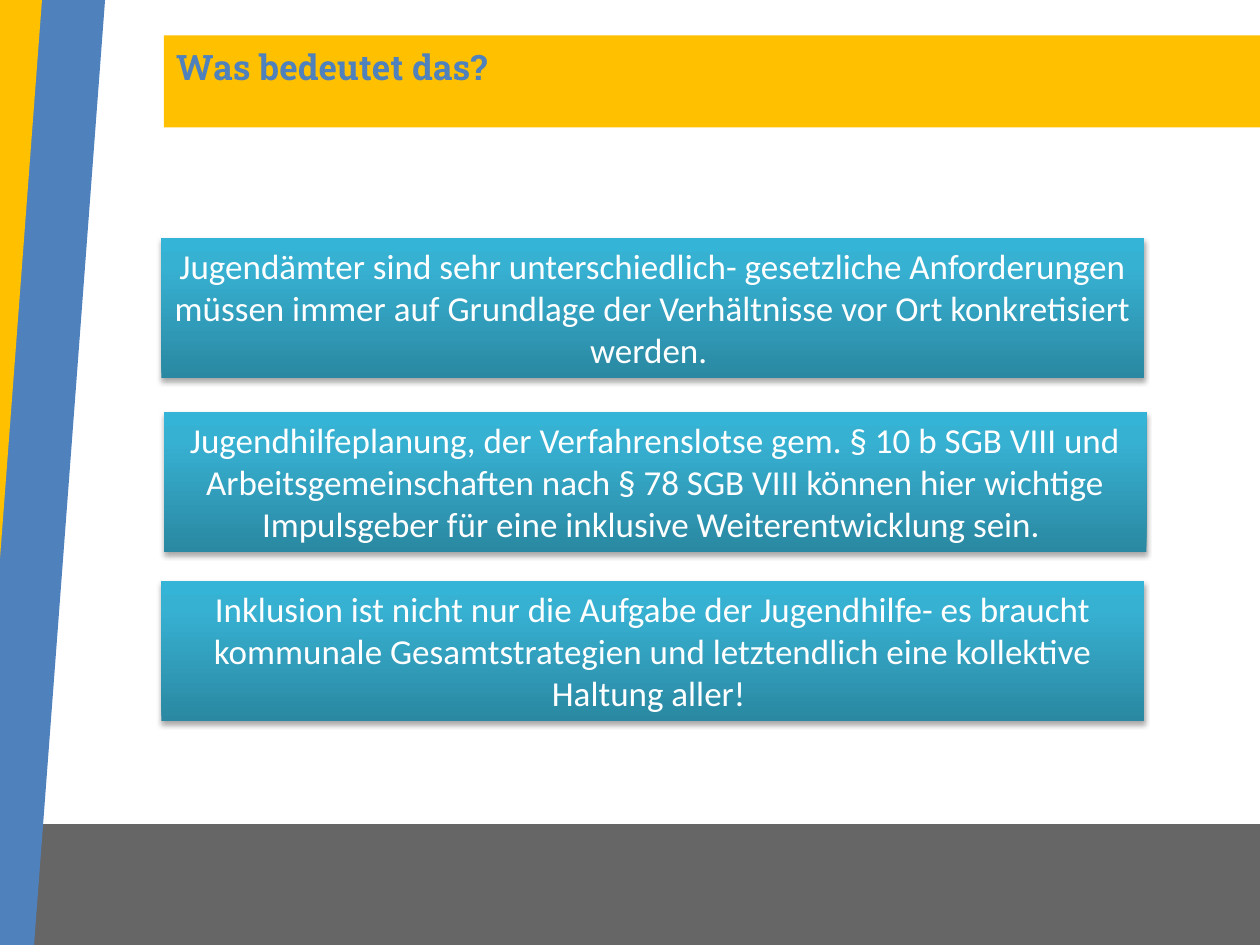
import copy
from dataclasses import dataclass

import lxml.etree
import pptx
import pptx.dml.color
import pptx.enum.shapes
import pptx.enum.text
import pptx.oxml
import pptx.oxml.ns
import pptx.util

Pt = pptx.util.Pt
qn = pptx.oxml.ns.qn

COLORS = {
    "blue": "4F81BD",
    "yellow": "FFC000",
    "black": "000000",
    "white": "FFFFFF",
    "teal_dark": "2A88A2",
    "teal": "37B1D2",
    "teal_light": "34B4D6",
}
STATEMENT_STOPS = [(0, "teal_dark"), (0.8, "teal"), (1, "teal_light")]
STATEMENT_WIDTH, STATEMENT_HEIGHT = 561.6, 79.9


@dataclass
class Band:
    left: float
    top: float
    width: float
    height: float
    color: str
    rotation: float = 0
    opacity: int = 100


@dataclass
class Statement:
    left: float
    top: float
    text: str


BANDS = [
    Band(-8.64, 470.9, 805, 71.3, "black", opacity=60),
    Band(2.9, -16.6, 36.7, 576, "blue", rotation=4.3),
    Band(-26.6, -22.3, 36.7, 413.3, "yellow", rotation=4.3),
    Band(93.6, 20.2, 652.3, 52.6, "yellow"),
]
STATEMENTS = [
    Statement(92.2, 136.1, "Jugendämter sind sehr unterschiedlich- gesetzliche Anforderungen "
              "müssen immer auf Grundlage der Verhältnisse vor Ort konkretisiert werden. "),
    Statement(93.6, 235.4, "Jugendhilfeplanung, der Verfahrenslotse gem. § 10 b SGB VIII und "
              "Arbeitsgemeinschaften nach § 78 SGB VIII können hier wichtige "
              "Impulsgeber für eine inklusive Weiterentwicklung sein. "),
    Statement(92.2, 331.9, "Inklusion ist nicht nur die Aufgabe der Jugendhilfe- es braucht "
              "kommunale Gesamtstrategien und letztendlich eine kollektive Haltung aller! "),
]


def rgb(name: str) -> pptx.dml.color.RGBColor:
    return pptx.dml.color.RGBColor.from_string(COLORS[name])


def add_rectangle(slide, left: float, top: float, width: float, height: float):
    rectangle = slide.shapes.add_shape(
        pptx.enum.shapes.MSO_SHAPE.RECTANGLE, Pt(left), Pt(top), Pt(width), Pt(height))
    rectangle.shadow.inherit = False
    rectangle.line.fill.background()
    return rectangle


def add_band(slide, band: Band) -> None:
    rectangle = add_rectangle(slide, band.left, band.top, band.width, band.height)
    rectangle.rotation = band.rotation
    rectangle.fill.solid()
    rectangle.fill.fore_color.rgb = rgb(band.color)
    if band.opacity < 100:
        color = rectangle._element.spPr.find(qn("a:solidFill")).find(qn("a:srgbClr"))
        alpha = lxml.etree.SubElement(color, qn("a:alpha"))
        alpha.set("val", str(band.opacity * 1000))


def fill_with_gradient(shape) -> None:
    """Fill upwards from dark to light teal with three stops."""
    shape.fill.gradient()
    shape.fill.gradient_angle = 90
    stop_list = shape._element.spPr.find(qn("a:gradFill")).find(qn("a:gsLst"))
    stop_list.append(copy.deepcopy(stop_list[-1]))
    for stop, (position, color) in zip(shape.fill.gradient_stops, STATEMENT_STOPS):
        stop.position = position
        stop.color.rgb = rgb(color)


def add_soft_shadow(shape) -> None:
    shadow = pptx.oxml.parse_xml(
        f'<a:outerShdw {pptx.oxml.ns.nsdecls("a")} blurRad="{Pt(3.1)}" dist="{Pt(1.8)}" '
        f'dir="5400000" rotWithShape="0"><a:srgbClr val="{COLORS["black"]}">'
        '<a:alpha val="35000"/></a:srgbClr></a:outerShdw>')
    shape._element.spPr.find(qn("a:effectLst")).append(shadow)


def write_text(shape, text: str, font_name: str, color: str, bold: bool = False) -> None:
    frame = shape.text_frame
    frame.text = text
    frame.word_wrap = True
    frame.auto_size = pptx.enum.text.MSO_AUTO_SIZE.SHAPE_TO_FIT_TEXT
    font = frame.paragraphs[0].runs[0].font
    font.name = font_name
    font.size = Pt(20)
    font.bold = bold
    font.color.rgb = rgb(color)


def add_statement(slide, statement: Statement) -> None:
    box = add_rectangle(
        slide, statement.left, statement.top, STATEMENT_WIDTH, STATEMENT_HEIGHT)
    fill_with_gradient(box)
    add_soft_shadow(box)
    write_text(box, statement.text, "Calibri", "white")
    box.text_frame.vertical_anchor = pptx.enum.text.MSO_ANCHOR.TOP
    box.text_frame.paragraphs[0].alignment = pptx.enum.text.PP_ALIGN.CENTER


def main() -> None:
    presentation = pptx.Presentation()
    presentation.slide_width, presentation.slide_height = Pt(720), Pt(540)
    slide = presentation.slides.add_slide(presentation.slide_layouts[6])
    for band in BANDS:
        add_band(slide, band)
    title = slide.shapes.add_textbox(Pt(93.6), Pt(22.3), Pt(626.4), Pt(31.7))
    write_text(title, "Was bedeutet das?", "Roboto Slab", "blue", bold=True)
    for statement in STATEMENTS:
        add_statement(slide, statement)
    presentation.save("out.pptx")


if __name__ == "__main__":
    main()
